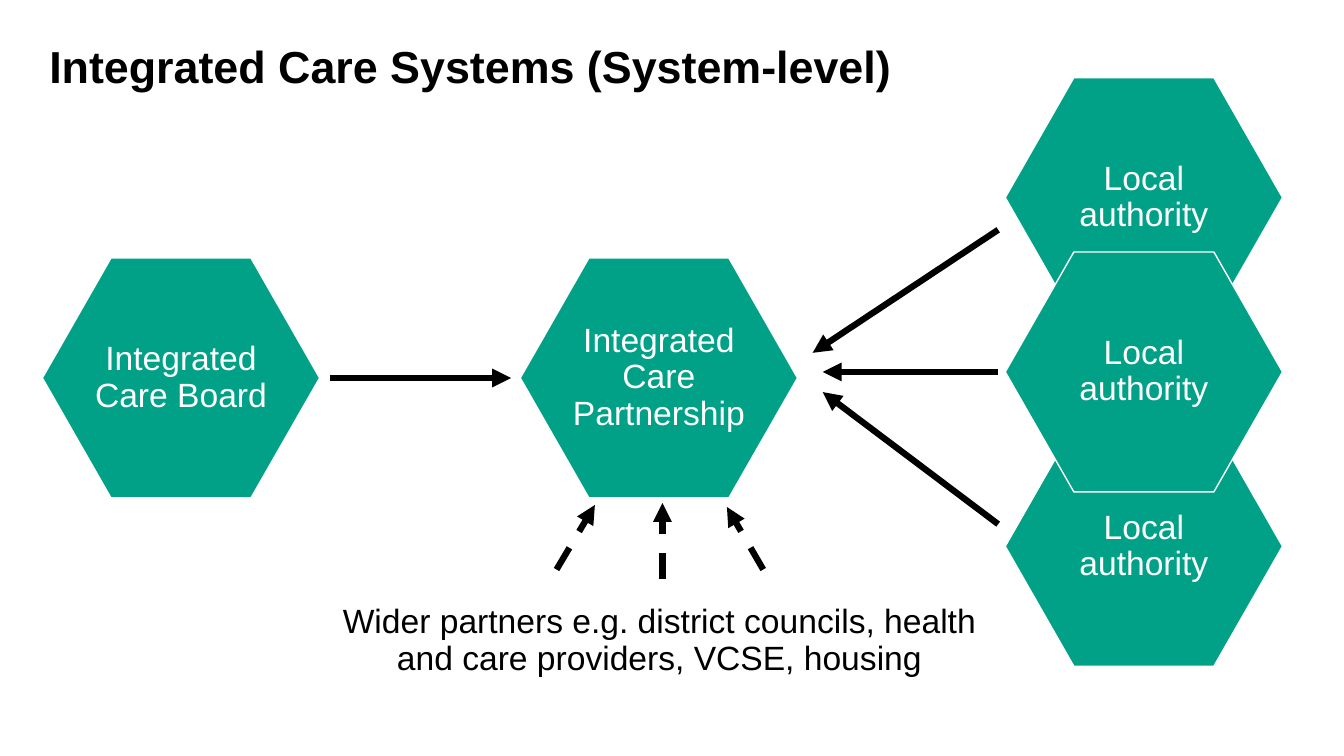
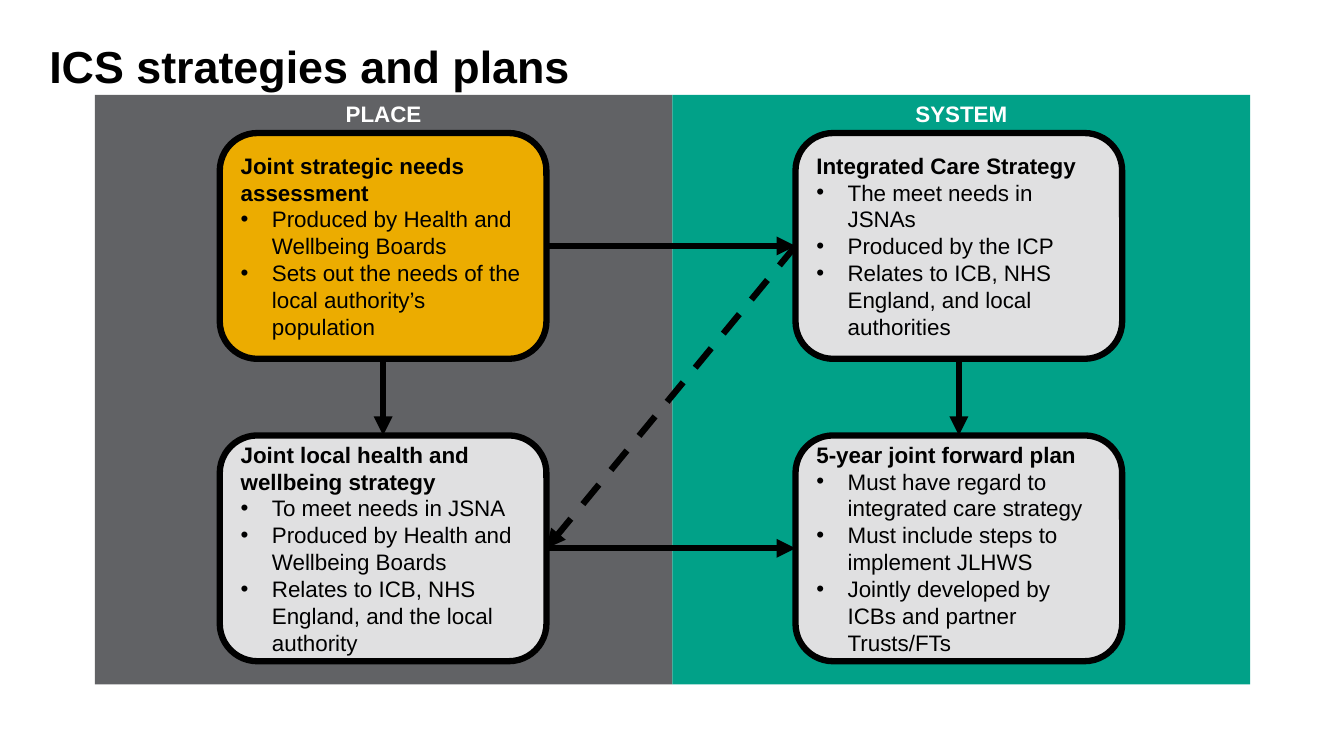
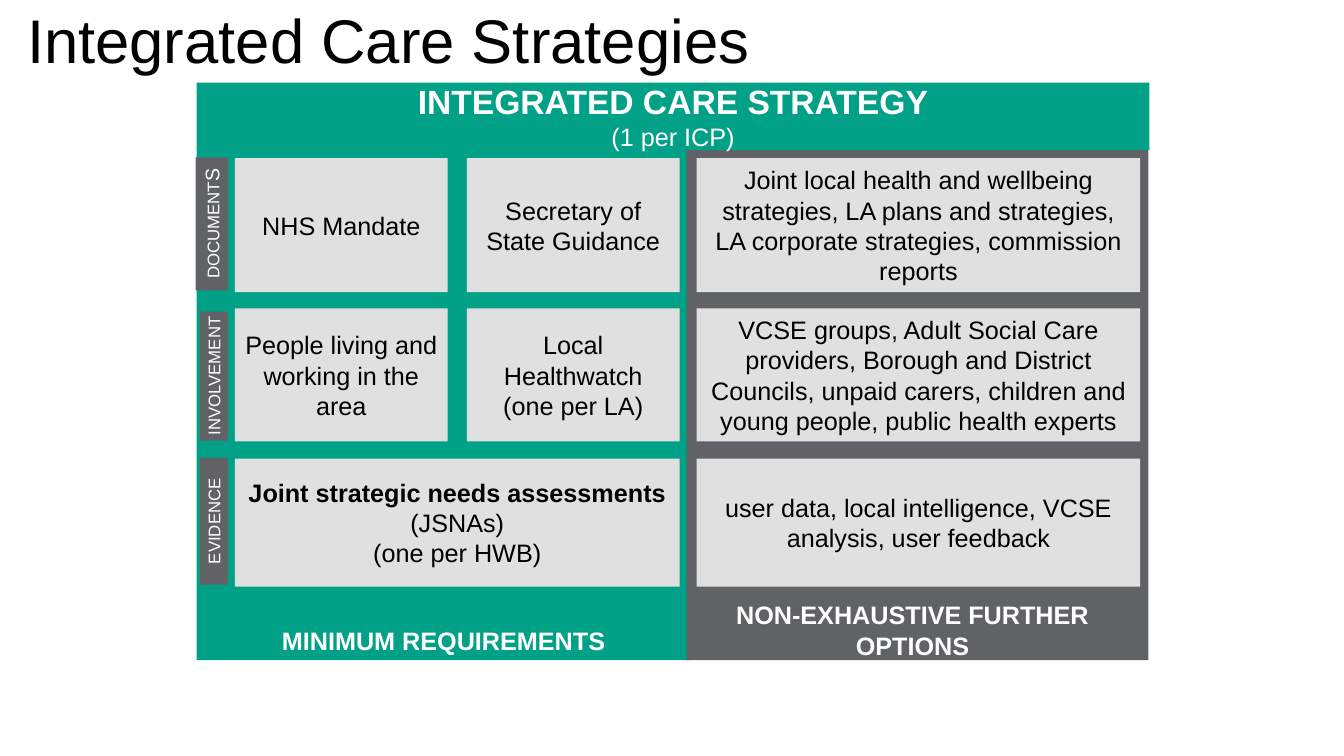
from lxml import etree
from pptx import Presentation
from pptx import util as u
from pptx.dml.color import RGBColor
from pptx.enum import dml, shapes, text
from pptx.oxml.ns import qn

COLORS = {"green": "01A188", "grey": "616265", "pale": "E0E0E1",
          "amber": "ECAC00", "black": "000000", "white": "FFFFFF"}
FONT = "Arial"
SHAPE = shapes.MSO_SHAPE
ALIGN = text.PP_ALIGN
ANCHOR = text.MSO_ANCHOR
TOP, LEFT, BOTTOM, RIGHT = range(4)
MARGINS = (0.1, 0.05, 0.1, 0.05)
THIN = (0.01,) * 4

HEX_W, HEX_H = 2.75, 2.38
AUTHORITY_X, AUTHORITY_Y, AUTHORITY_STEP = 9.97, 0.77, 1.73
HEXAGONS = [
    ("Local authority", AUTHORITY_X, AUTHORITY_Y + 2 * AUTHORITY_STEP),
    ("Integrated Care Board", 0.42, 2.56),
    ("Integrated Care Partnership", 5.16, 2.56),
    ("Local authority", AUTHORITY_X, AUTHORITY_Y),
    ("Local authority", AUTHORITY_X, AUTHORITY_Y + AUTHORITY_STEP),
]
PARTNERS = "Wider partners e.g. district councils, health and care providers, VCSE, housing"
SYSTEM_ARROWS = [
    ((3.27, 3.75), (5.07, 3.75), False),
    ((9.9, 2.28), (8.06, 3.5), False),
    ((9.9, 3.69), (8.16, 3.69), False),
    ((9.9, 5.2), (8.16, 3.89), False),
    ((6.57, 5.74), (6.57, 4.99), True),
    ((5.52, 5.65), (5.9, 5.01), True),
    ((7.57, 5.65), (7.21, 5.03), True),
]

BANDS = [("PLACE", "grey"), ("SYSTEM", "green")]
BAND_X, BAND_Y, BAND_W, BAND_H = 0.94, 0.94, 5.73, 5.85
PLAN_X, PLAN_Y, PLAN_W, PLAN_H = 2.18, 1.32, 3.24, 2.24
PLAN_DX, PLAN_DY = 5.71, 3
PLANS = {
    "jsna": (0, 0, "amber", "Joint strategic needs assessment", [
        "Produced by Health and Wellbeing Boards",
        "Sets out the needs of the local authority’s population"]),
    "care": (1, 0, "pale", "Integrated Care Strategy", [
        "The meet needs in JSNAs",
        "Produced by the ICP",
        "Relates to ICB, NHS England, and local authorities"]),
    "wellbeing": (0, 1, "pale", "Joint local health and wellbeing strategy", [
        "To meet needs in JSNA",
        "Produced by Health and Wellbeing Boards",
        "Relates to ICB, NHS England, and the local authority"]),
    "forward": (1, 1, "pale", "5-year joint forward plan", [
        "Must have regard to integrated care strategy",
        "Must include steps to implement JLHWS",
        "Jointly developed by ICBs and partner Trusts/FTs"]),
}
PLAN_LINKS = [
    ("jsna", BOTTOM, "wellbeing", TOP, False),
    ("care", BOTTOM, "forward", TOP, False),
    ("jsna", RIGHT, "care", LEFT, False),
    ("wellbeing", RIGHT, "forward", LEFT, False),
    ("care", LEFT, "wellbeing", RIGHT, True),
]

PANELS = [
    ("MINIMUM REQUIREMENTS", "green", 1.95, 4.9, MARGINS),
    ("NON-EXHAUSTIVE FURTHER OPTIONS", "grey", 6.81, 4.58, (0, 0.04, 0.1, 0)),
]
COLUMNS = [(2.33, 2.11), (4.63, 2.11), (6.91, 4.4)]
ROW_Y, ROW_STEP = 1.57, 1.49
ROW_HEIGHTS = [1.33, 1.32, 1.27]
CELLS = [
    (0, 0, 0, ["NHS Mandate"]),
    (0, 1, 1, ["Secretary of State Guidance"]),
    (0, 2, 2, ["Joint local health and wellbeing strategies, LA plans and strategies, "
               "LA corporate strategies, commission reports"]),
    (1, 0, 0, ["People living and working in the area"]),
    (1, 1, 1, ["Local Healthwatch", "(one per LA)"]),
    (1, 2, 2, ["VCSE groups, Adult Social Care providers, Borough and District "
               "Councils, unpaid carers, children and young people, public health experts"]),
    (2, 0, 1, [[("Joint strategic needs assessments", {"bold": True})],
               "(JSNAs)", "(one per HWB)"]),
    (2, 2, 2, ["user data, local intelligence, VCSE analysis, user feedback"]),
]
ROW_LABELS = [
    ([("DOCUMENT", {}), ("S", {"size": 14})], 2.1, 2.22, 1.32, 0.32),
    ("INVOLVEMENT", 2.12, 3.73, 1.28, 0.28),
    ("EVIDENCE", 2.12, 5.17, 1.26, 0.28),
]


def rgb(name):
    return RGBColor.from_string(COLORS[name])


def inches(*values):
    return [u.Inches(value) for value in values]


def add_bullet(paragraph):
    props = paragraph._p.get_or_add_pPr()
    props.set("marL", str(u.Inches(0.31)))
    props.set("indent", str(-u.Inches(0.31)))
    etree.SubElement(props, qn("a:buFont"), typeface=FONT)
    etree.SubElement(props, qn("a:buChar"), char="•")


def write(shape, paragraphs, size, color="black", bold=False, align=ALIGN.CENTER,
          anchor=ANCHOR.MIDDLE, margins=MARGINS, spacing=None, bullets_from=None):
    frame = shape.text_frame
    frame.word_wrap = True
    frame.vertical_anchor = anchor
    (frame.margin_left, frame.margin_top,
     frame.margin_right, frame.margin_bottom) = inches(*margins)
    for index, runs in enumerate(paragraphs):
        paragraph = frame.add_paragraph() if index else frame.paragraphs[0]
        paragraph.alignment = align
        if spacing:
            paragraph.line_spacing = spacing
        if bullets_from is not None and index >= bullets_from:
            add_bullet(paragraph)
        for words, style in [(runs, {})] if isinstance(runs, str) else runs:
            run = paragraph.add_run()
            run.text = words
            run.font.name = FONT
            run.font.size = u.Pt(style.get("size", size))
            run.font.bold = style.get("bold", bold)
            run.font.color.rgb = rgb(color)


def add_block(slide, box, fill, kind=SHAPE.RECTANGLE, line=None):
    block = slide.shapes.add_shape(kind, *inches(*box))
    block.shadow.inherit = False
    block.fill.solid()
    block.fill.fore_color.rgb = rgb(fill)
    if line:
        block.line.color.rgb = rgb(line[0])
        block.line.width = u.Pt(line[1])
    else:
        block.line.fill.background()
    return block


def add_arrow(slide, start=(0, 0), end=(0, 0), dashed=False):
    arrow = slide.shapes.add_connector(shapes.MSO_CONNECTOR.STRAIGHT, *inches(*start, *end))
    arrow.line.color.rgb = rgb("black")
    arrow.line.width = u.Pt(4.5)
    if dashed:
        arrow.line.dash_style = dml.MSO_LINE.DASH
    etree.SubElement(arrow.line._get_or_add_ln(), qn("a:tailEnd"), type="triangle")
    etree.SubElement(arrow._element.spPr, qn("a:effectLst"))
    return arrow


def add_title(slide, title, box=(0.39, 0.39, 12.52, 0.92), size=32, bold=True, spacing=0.9):
    heading = slide.shapes.add_textbox(*inches(*box))
    write(heading, [title], size, bold=bold, align=ALIGN.LEFT, anchor=ANCHOR.TOP,
          spacing=spacing)


def build_system(slide):
    add_title(slide, "Integrated Care Systems (System-level)")
    for body, x, y in HEXAGONS:
        hexagon = add_block(slide, (x, y, HEX_W, HEX_H), "green", SHAPE.HEXAGON, ("white", 1))
        hexagon.adjustments[0] = 0.286
        write(hexagon, [body], 24, "white", margins=THIN, spacing=0.9)
    partners = slide.shapes.add_textbox(*inches(3.12, 5.9, 6.84, 0.92))
    write(partners, [PARTNERS], 24, margins=THIN, spacing=0.9)
    for start, end, dashed in SYSTEM_ARROWS:
        add_arrow(slide, start, end, dashed)


def build_plans(slide):
    for index, (level, fill) in enumerate(BANDS):
        band = add_block(slide, (BAND_X + index * BAND_W, BAND_Y, BAND_W, BAND_H), fill)
        write(band, [level], 16, "white", bold=True, anchor=ANCHOR.TOP)
    cards = {}
    for key, (column, row, fill, heading, points) in PLANS.items():
        box = (PLAN_X + column * PLAN_DX, PLAN_Y + row * PLAN_DY, PLAN_W, PLAN_H)
        cards[key] = add_block(slide, box, fill, SHAPE.ROUNDED_RECTANGLE, ("black", 4.5))
        write(cards[key], [[(heading, {"bold": True})], *points], 16,
              align=ALIGN.LEFT, bullets_from=1)
    add_title(slide, "ICS strategies and plans")
    for source, source_side, target, target_side, dashed in PLAN_LINKS:
        arrow = add_arrow(slide, dashed=dashed)
        arrow.begin_connect(cards[source], source_side)
        arrow.end_connect(cards[target], target_side)


def build_strategy(slide):
    for caption, fill, x, width, margins in PANELS:
        panel = add_block(slide, (x, 1.49, width, 5.06), fill)
        write(panel, [caption], 18, "white", bold=True, anchor=ANCHOR.BOTTOM, margins=margins)
    banner = add_block(slide, (1.95, 0.82, 9.45, 0.67), "green")
    write(banner, [[("INTEGRATED CARE STRATEGY", {"size": 24, "bold": True})], "(1 per ICP)"],
          18, "white")
    for row, first, last, lines in CELLS:
        x = COLUMNS[first][0]
        width = sum(COLUMNS[last]) - x
        cell = add_block(slide, (x, ROW_Y + row * ROW_STEP, width, ROW_HEIGHTS[row]), "pale")
        write(cell, lines, 18)
    for caption, center_x, center_y, length, depth in ROW_LABELS:
        label = add_block(slide, (center_x - length / 2, center_y - depth / 2, length, depth),
                          "grey")
        label.rotation = 270
        write(label, [caption], 12, "white", anchor=ANCHOR.TOP, margins=(0.04,) * 4)
    add_title(slide, "Integrated Care Strategies", (0.17, -0.03, 10.55, 0.84), 44, False, None)


def main():
    deck = Presentation()
    deck.slide_width, deck.slide_height = inches(13.33, 7.5)
    for build in (build_system, build_plans, build_strategy):
        build(deck.slides.add_slide(deck.slide_layouts[6]))
    deck.save("out.pptx")


if __name__ == "__main__":
    main()
